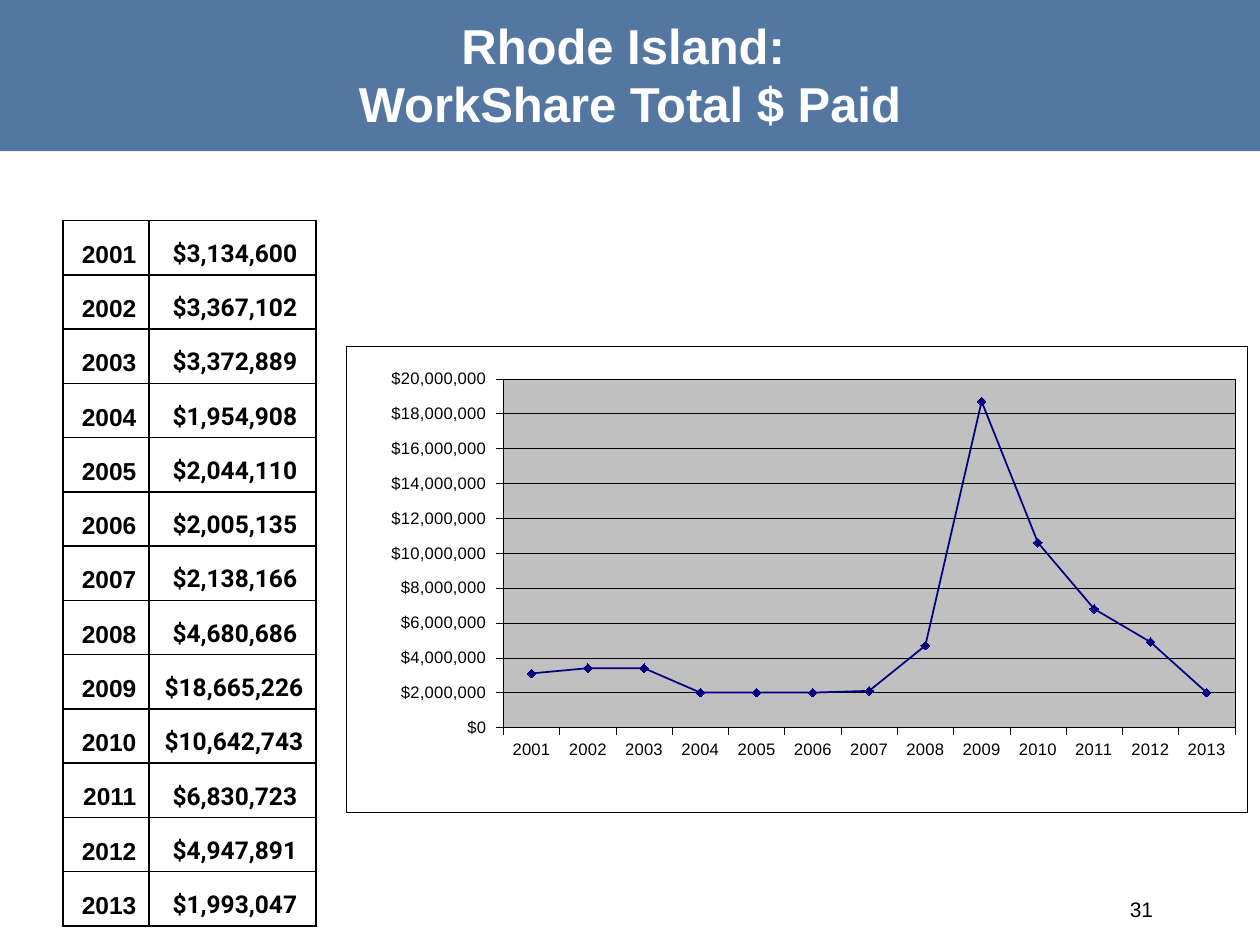
from dataclasses import dataclass

from lxml.etree import SubElement
from pptx import Presentation
from pptx.chart.data import CategoryChartData
from pptx.dml.color import RGBColor
from pptx.enum.chart import XL_CHART_TYPE, XL_MARKER_STYLE, XL_TICK_MARK
from pptx.enum.shapes import MSO_SHAPE
from pptx.enum.text import MSO_ANCHOR, PP_ALIGN
from pptx.oxml import parse_xml
from pptx.oxml.ns import nsdecls, qn
from pptx.util import Pt


@dataclass(frozen=True)
class Theme:
    band: str = "376092"
    band_alpha: int = 85
    white: str = "FFFFFF"
    black: str = "000000"
    plot: str = "C0C0C0"
    series: str = "000080"
    font: str = "Arial"
    amount_font: str = "Roboto"
    title_size: float = 28
    table_size: float = 14
    number_size: float = 12
    chart_size: float = 9.5
    hairline: float = 0.25
    line: float = 1


THEME = Theme()
PAID = {
    "2001": 3134600, "2002": 3367102, "2003": 3372889, "2004": 1954908,
    "2005": 2044110, "2006": 2005135, "2007": 2138166, "2008": 4680686,
    "2009": 18665226, "2010": 10642743, "2011": 6830723, "2012": 4947891,
    "2013": 1993047,
}


def color(value):
    return RGBColor.from_string(value)


def style_font(font, size, value, name=THEME.font, bold=False):
    font.size, font.name, font.bold = Pt(size), name, bold
    font.color.rgb = color(value)


def style_line(line, value, width):
    line.color.rgb = color(value)
    line.width = Pt(width)


def add_text(slide, box, lines, size, value, align, bold=False):
    text_frame = slide.shapes.add_textbox(*map(Pt, box)).text_frame
    text_frame.word_wrap = True
    text_frame.vertical_anchor = MSO_ANCHOR.MIDDLE
    paragraph = text_frame.paragraphs[0]
    paragraph.alignment = align
    for index, line in enumerate(lines):
        if index:
            paragraph.add_line_break()
        run = paragraph.add_run()
        run.text = line
        style_font(run.font, size, value, bold=bold)


def add_header(slide, box):
    # Translucent band with the title centred over it
    left, top, width, height = box
    band = slide.shapes.add_shape(MSO_SHAPE.RECTANGLE, *map(Pt, box))
    band.shadow.inherit = False
    band.fill.solid()
    band.fill.fore_color.rgb = color(THEME.band)
    band.line.fill.background()
    fill_color = band.fill._xPr.find(qn("a:solidFill"))[0]
    SubElement(fill_color, qn("a:alpha"), val=str(THEME.band_alpha * 1000))
    add_text(slide, (left, top, width, height - 2),
             ["Rhode Island: ", "WorkShare Total $ Paid"],
             THEME.title_size, THEME.white, PP_ALIGN.CENTER, True)


def chart_area_properties(fill, border):
    return parse_xml(
        f'<c:spPr {nsdecls("c", "a")}>'
        f'<a:solidFill><a:srgbClr val="{fill}"/></a:solidFill>'
        f'<a:ln w="{Pt(THEME.hairline)}"><a:solidFill><a:srgbClr val="{border}"/>'
        '</a:solidFill></a:ln></c:spPr>')


def add_paid_chart(slide, box):
    # The line is plotted to the nearest hundred thousand
    data = CategoryChartData()
    data.categories = list(PAID)
    data.add_series("Series 1", [round(amount, -5) for amount in PAID.values()])
    chart = slide.shapes.add_chart(
        XL_CHART_TYPE.LINE_MARKERS, *map(Pt, box), data).chart
    chart.has_legend = False
    chart.has_title = False
    style_font(chart.font, THEME.chart_size, THEME.black)

    # Axes and gridlines
    value_axis = chart.value_axis
    for axis in (chart.category_axis, value_axis):
        axis.major_tick_mark = XL_TICK_MARK.OUTSIDE
        axis.minor_tick_mark = XL_TICK_MARK.NONE
        style_line(axis.format.line, THEME.black, THEME.hairline)
        style_font(axis.tick_labels.font, THEME.chart_size, THEME.black)
    value_axis.minimum_scale = 0
    value_axis.maximum_scale = 20_000_000
    value_axis.major_unit = 2_000_000
    value_axis.has_major_gridlines = True
    style_line(value_axis.major_gridlines.format.line, THEME.black, THEME.hairline)
    value_axis.tick_labels.number_format = r'"$"#,##0_);\("$"#,##0\)'
    value_axis.tick_labels.number_format_is_linked = False

    # Series
    plot = chart.plots[0]
    plot.vary_by_categories = False
    series = plot.series[0]
    series.smooth = False
    style_line(series.format.line, THEME.series, THEME.line)
    marker = series.marker
    marker.style, marker.size = XL_MARKER_STYLE.DIAMOND, 5
    marker.format.fill.solid()
    marker.format.fill.fore_color.rgb = color(THEME.series)
    style_line(marker.format.line, THEME.series, THEME.hairline)

    # Plot position, area fills and borders
    chart_space = chart._chartSpace
    chart_element = chart_space.find(qn("c:chart"))
    plot_area = chart_element.find(qn("c:plotArea"))
    for old_layout in plot_area.findall(qn("c:layout")):
        plot_area.remove(old_layout)
    settings = {"layoutTarget": "inner", "xMode": "edge", "yMode": "edge",
                "x": 0.174, "y": 0.069, "w": 0.812, "h": 0.749}
    items = "".join(f'<c:{key} val="{value}"/>' for key, value in settings.items())
    plot_area.insert(0, parse_xml(
        f'<c:layout {nsdecls("c")}><c:manualLayout>{items}</c:manualLayout></c:layout>'))
    plot_area.append(chart_area_properties(THEME.plot, THEME.black))
    chart_element.addnext(chart_area_properties(THEME.white, THEME.black))


def fill_cell(cell, text, font_name):
    cell.vertical_anchor = MSO_ANCHOR.BOTTOM
    paragraph = cell.text_frame.paragraphs[0]
    paragraph.alignment = PP_ALIGN.RIGHT
    run = paragraph.add_run()
    run.text = text
    style_font(run.font, THEME.table_size, THEME.black, font_name, True)
    properties = cell._tc.get_or_add_tcPr()
    for side in ("lnL", "lnR", "lnT", "lnB"):
        border = SubElement(properties, qn(f"a:{side}"), w=str(Pt(THEME.line)))
        solid = SubElement(border, qn("a:solidFill"))
        SubElement(solid, qn("a:srgbClr"), val=THEME.black)
    cell.fill.background()


def add_paid_table(slide, box):
    left, top, width, height = box
    table = slide.shapes.add_table(len(PAID), 2, *map(Pt, box)).table
    table.first_row = table.horz_banding = False
    year_width = 0.34 * width
    table.columns[0].width = Pt(year_width)
    table.columns[1].width = Pt(width - year_width)
    for index, (year, amount) in enumerate(PAID.items()):
        table.rows[index].height = Pt(height / len(PAID))
        fill_cell(table.cell(index, 0), year, THEME.font)
        fill_cell(table.cell(index, 1), f"${amount:,} ", THEME.amount_font)


def main():
    presentation = Presentation()
    presentation.slide_width, presentation.slide_height = Pt(720), Pt(540)
    slide = presentation.slides.add_slide(presentation.slide_layouts[6])
    add_header(slide, (0, 0, 720, 86.4))
    add_text(slide, (498, 505, 168, 28.8), ["31"],
             THEME.number_size, THEME.black, PP_ALIGN.RIGHT)
    add_paid_chart(slide, (198, 198, 515, 266.4))
    add_paid_table(slide, (36, 126, 144.6, 403.2))
    presentation.save("out.pptx")


if __name__ == "__main__":
    main()
